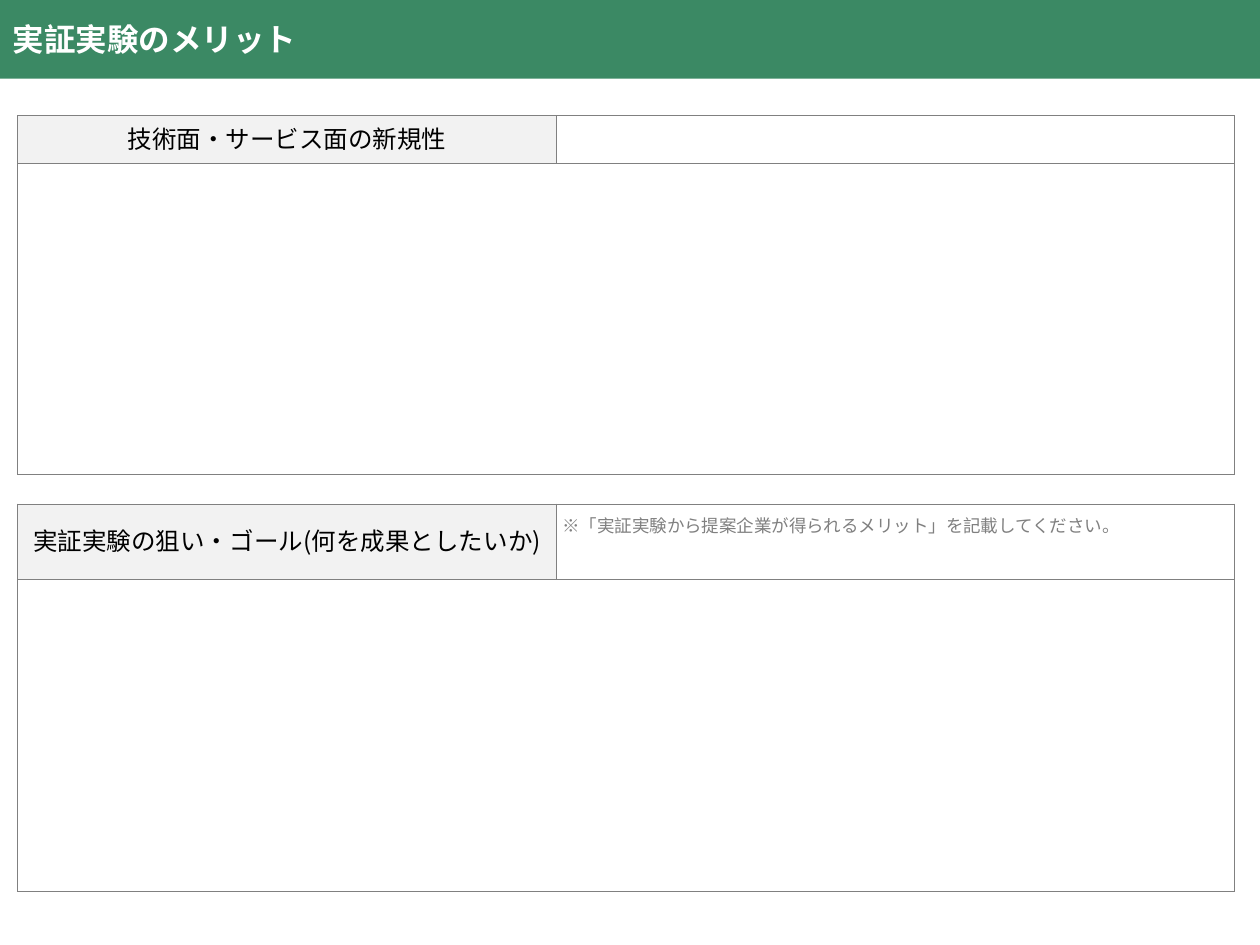
from dataclasses import dataclass

from lxml.etree import SubElement
from pptx import Presentation
from pptx.dml.color import RGBColor
from pptx.enum.text import MSO_ANCHOR, MSO_AUTO_SIZE, PP_ALIGN
from pptx.oxml.ns import qn
from pptx.util import Pt


@dataclass(frozen=True)
class Theme:
    font: str = "Noto Sans CJK JP"
    band: str = "3B8964"
    label_fill: str = "F2F2F2"
    paper: str = "FFFFFF"
    ink: str = "000000"
    grey: str = "808080"
    title_size: float = 18
    label_size: float = 14
    note_size: float = 10
    border: float = 0.5


def rgb(value):
    return RGBColor.from_string(value)


def set_all(target, values):
    for name, value in values.items():
        setattr(target, name, value)


class SlideBuilder:
    def __init__(self, prs, theme):
        self.theme = theme
        self.slide = prs.slides.add_slide(prs.slide_layouts[5])

    def add_text(self, tf, text, size, color, bold=False, **paragraph):
        p = tf.paragraphs[0]
        set_all(p, paragraph)
        r = p.add_run()
        r.text = text
        set_all(r.font, {"name": self.theme.font, "size": Pt(size), "bold": bold})
        r.font.color.rgb = rgb(color)
        ea = SubElement(r.font._element, qn("a:ea"))
        ea.set("typeface", self.theme.font)

    def title(self, text, width, height):
        sp = self.slide.shapes.title
        set_all(sp, {"left": 0, "top": 0, "width": Pt(width), "height": Pt(height)})
        sp.fill.solid()
        sp.fill.fore_color.rgb = rgb(self.theme.band)
        tf = sp.text_frame
        set_all(tf, {"auto_size": MSO_AUTO_SIZE.NONE, "word_wrap": True,
                     "vertical_anchor": MSO_ANCHOR.MIDDLE})
        self.add_text(tf, text, self.theme.title_size, self.theme.paper, True,
                      alignment=PP_ALIGN.LEFT)

    def style_cell(self, cell, fill=None):
        """Draw the four borders and set the fill; no fill leaves the cell clear."""
        tc_pr = cell._tc.get_or_add_tcPr()
        for side in ("a:lnL", "a:lnR", "a:lnT", "a:lnB"):
            ln = SubElement(tc_pr, qn(side), w=str(Pt(self.theme.border)))
            color = SubElement(SubElement(ln, qn("a:solidFill")), qn("a:srgbClr"))
            color.set("val", self.theme.grey)
        if fill:
            cell.fill.solid()
            cell.fill.fore_color.rgb = rgb(fill)
        else:
            cell.fill.background()

    def answer_table(self, label, left, top, cols, rows):
        """Add a label row above one merged, empty answer cell."""
        frame = self.slide.shapes.add_table(
            2, 2, Pt(left), Pt(top), Pt(sum(cols)), Pt(sum(rows)))
        table = frame.table
        set_all(table, {"first_row": False, "horz_banding": False})
        for col, width in zip(table.columns, cols):
            col.width = Pt(width)
        for row, height in zip(table.rows, rows):
            row.height = Pt(height)
        table.cell(1, 0).merge(table.cell(1, 1))
        th = self.theme
        fills = (th.label_fill, None, th.paper, th.paper)
        for cell, fill in zip(table.iter_cells(), fills):
            self.style_cell(cell, fill)
        head, blank = table.cell(0, 0), table.cell(0, 1)
        head.vertical_anchor = MSO_ANCHOR.MIDDLE
        self.add_text(head.text_frame, label, th.label_size, th.ink,
                      alignment=PP_ALIGN.CENTER, line_spacing=Pt(18))
        # An empty cell otherwise takes the default 18 pt and stretches its row
        SubElement(blank.text_frame.paragraphs[0]._p, qn("a:endParaRPr"),
                   sz=str(th.label_size * 100))

    def note(self, text, left, top, width, height):
        sp = self.slide.shapes.add_textbox(Pt(left), Pt(top), Pt(width), Pt(height))
        tf = sp.text_frame
        set_all(tf, {"word_wrap": True, "auto_size": MSO_AUTO_SIZE.SHAPE_TO_FIT_TEXT,
                     "vertical_anchor": MSO_ANCHOR.MIDDLE})
        set_all(tf, {f"margin_{side}": Pt(2.88)
                     for side in ("left", "top", "right", "bottom")})
        self.add_text(tf, text, self.theme.note_size, self.theme.grey)


def main():
    prs = Presentation()
    set_all(prs, {"slide_width": Pt(720), "slide_height": Pt(540)})
    page = SlideBuilder(prs, Theme())
    page.title("実証実験のメリット", 720, 45)
    sections = (
        ("技術面・サービス面の新規性", 66),
        ("実証実験の狙い・ゴール(何を成果としたいか)", 288),
    )
    for label, top in sections:
        page.answer_table(label, 10, top, cols=(308.2, 387.4), rows=(27.4, 178))
    page.note("※「実証実験から提案企業が得られるメリット」を記載してください。",
              318.5, 291.5, 374.4, 18)
    prs.save("out.pptx")


if __name__ == "__main__":
    main()
